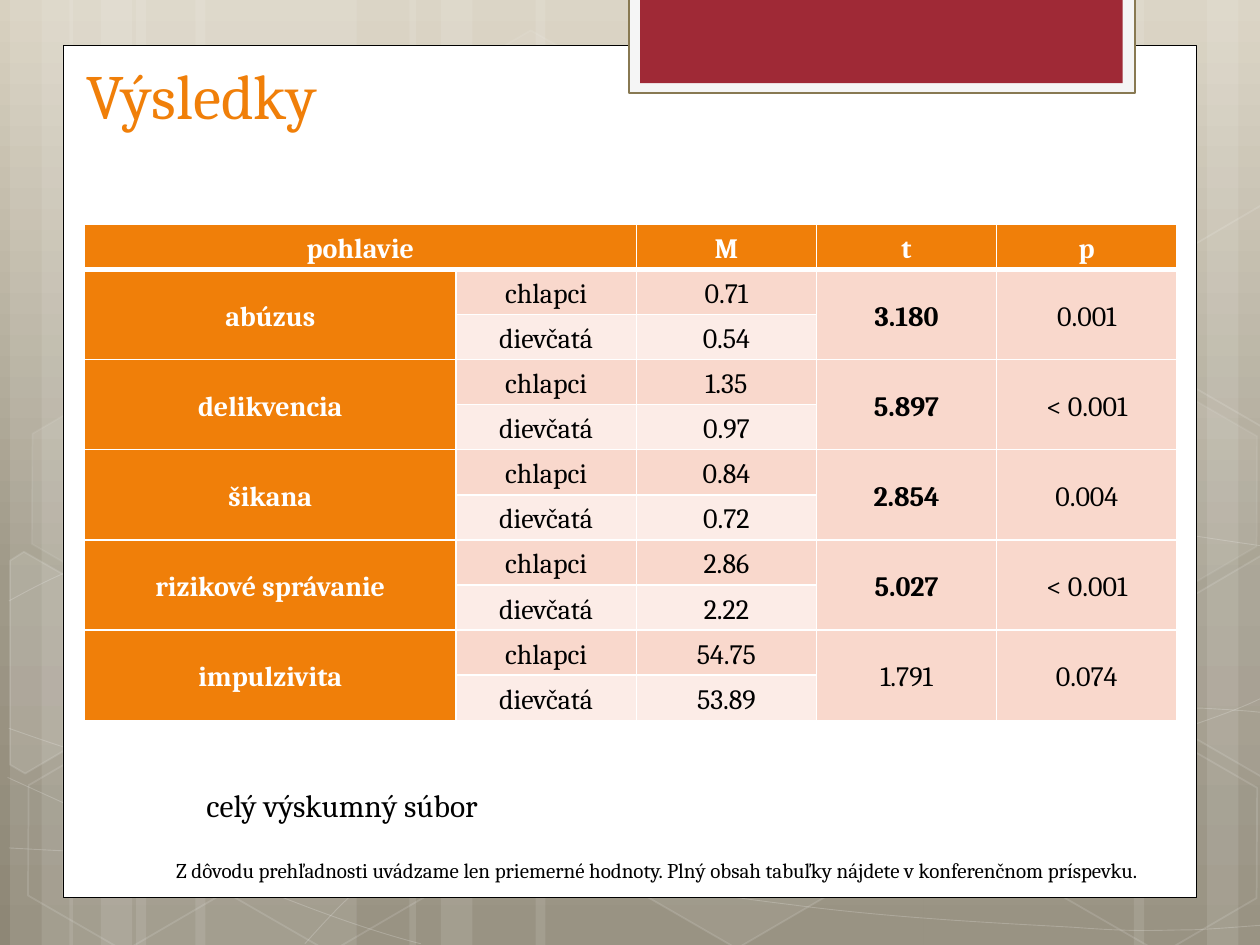
from copy import deepcopy

from lxml import etree
from pptx import Presentation
from pptx.dml.color import RGBColor
from pptx.enum.shapes import MSO_SHAPE
from pptx.enum.text import MSO_ANCHOR, MSO_AUTO_SIZE, PP_ALIGN
from pptx.oxml.ns import qn
from pptx.util import Inches, Pt

WHITE = RGBColor(0xFF, 0xFF, 0xFF)
BLACK = RGBColor(0, 0, 0)
ORANGE = RGBColor(0xF0, 0x7F, 0x09)
PINK = RGBColor(0xF9, 0xD8, 0xCC)
PALE_PINK = RGBColor(0xFC, 0xEC, 0xE7)
CRIMSON = RGBColor(0x9F, 0x29, 0x36)
TAB_GRAY = RGBColor(0xF5, 0xF5, 0xF5)
TAB_EDGE = RGBColor(0x88, 0x79, 0x52)
SKY = [(0, RGBColor(0xD8, 0xD1, 0xC0)), (0.62, RGBColor(0x9F, 0x99, 0x88)),
       (1, RGBColor(0x8E, 0x87, 0x76))]
FONT = "Cambria"

# left, width
STRIPES = [(1.08, 1.75), (0.08, 0.5), (0.33, 0.83), (1.55, 1.75), (0.55, 0.5), (0.8, 0.83),
           (7.33, 1.75), (9.58, 0.5), (9, 0.83), (4.25, 3.08), (3.25, 0.5), (3.5, 0.83)]
# start point, then two control points and an end point for each segment
CURVES = [
    [(0.07, 6.73), (0.61, 6.76), (1.15, 6.79), (1.9, 6.78), (2.65, 6.77), (3.58, 6.75),
     (4.58, 6.65), (5.58, 6.55), (7, 6.36), (7.92, 6.17), (8.83, 5.98), (9.77, 5.68),
     (10.07, 5.51)],
    [(0.07, 4.77), (0.36, 4.61), (0.65, 4.46), (1.21, 4.31), (1.78, 4.16), (2.59, 3.94),
     (3.47, 3.87), (4.36, 3.8), (5.44, 3.79), (6.54, 3.87), (7.64, 3.95), (9.47, 4.26),
     (10.07, 4.34)],
    [(0.06, 6.17), (1.27, 6.72), (2.47, 7.27), (3.34, 7.49)],
    [(0.07, 5.78), (0.38, 5.89), (0.7, 6), (1.28, 6.16), (1.86, 6.31), (2.73, 6.56),
     (3.57, 6.73), (4.4, 6.9), (5.45, 7.08), (6.28, 7.18), (7.11, 7.29), (8, 7.33),
     (8.53, 7.36), (9.05, 7.4), (9.19, 7.38), (9.45, 7.38), (9.71, 7.37), (9.89, 7.35),
     (10.07, 7.34)],
    [(2.42, 7.49), (2.6, 7.29), (2.78, 7.09), (3.02, 6.91), (3.26, 6.73), (3.6, 6.53),
     (3.88, 6.39), (4.16, 6.25), (4.33, 6.19), (4.7, 6.09), (5.06, 5.99), (5.73, 5.85),
     (6.08, 5.78), (6.44, 5.71), (6.49, 5.71), (6.8, 5.69), (7.11, 5.66), (7.6, 5.63),
     (7.94, 5.62), (8.29, 5.61), (8.86, 5.62), (8.86, 5.62), (8.86, 5.62), (9.53, 5.62),
     (9.53, 5.62), (9.71, 5.63), (9.88, 5.64), (9.97, 5.65), (10.06, 5.66), (10.03, 5.65),
     (10.06, 5.66)],
]
# left, top, fill opacity, line opacity
HEXAGONS = [(3.34, 0.36, 4, 8), (4.97, 5.89, 6, 12), (0.11, 5.91, 0, 12), (0.14, 3.12, 7, 8),
            (1.74, 5.92, 0, 12), (7.53, 4.53, 10, 12), (8.34, 5.93, 0, 12), (8.34, 3.14, 7, 8)]
# corners, fill opacity
CUT_HEXAGONS = [
    ([(0.08, 4.45), (0.19, 4.38), (0.96, 4.82), (0.95, 5.7), (0.2, 6.14), (0.08, 6.07)], 10),
    ([(9.26, 4.85), (10.01, 4.41), (10.09, 4.46), (10.09, 6.13), (10.02, 6.17),
      (9.26, 5.73)], 4),
    ([(9.26, 2.07), (10.01, 1.63), (10.1, 1.68), (10.09, 3.35), (10.02, 3.39),
      (9.26, 2.95)], 0),
]

HEADERS = ["pohlavie", None, "M", "t", "p"]
# variable, mean of boys, mean of girls, t, p, significant
RESULTS = [
    ("abúzus", "0.71", "0.54", "3.180", "0.001", True),
    ("delikvencia", "1.35", "0.97", "5.897", "< 0.001", True),
    ("šikana", "0.84", "0.72", "2.854", "0.004", True),
    ("rizikové správanie", "2.86", "2.22", "5.027", "< 0.001", True),
    ("impulzivita", "54.75", "53.89", "1.791", "0.074", False),
]


def paint(shape, fill=None, line=None, width=1, fill_alpha=100, line_alpha=100):
    """Set fill and line with opacity in percent; None leaves the part empty."""
    shape.shadow.inherit = False
    for part, color, alpha in ((shape.fill, fill, fill_alpha),
                               (shape.line.fill, line, line_alpha)):
        if color is None or alpha == 0:
            part.background()
        else:
            part.solid()
            part.fore_color.rgb = color
    if line is not None:
        shape.line.width = Pt(width)
    properties = shape.element.spPr
    for tag, alpha in (("a:solidFill", fill_alpha), ("a:ln/a:solidFill", line_alpha)):
        steps = "/".join(qn(step) for step in tag.split("/"))
        color = properties.find(steps + "/" + qn("a:srgbClr"))
        if color is not None and alpha < 100:
            etree.SubElement(color, qn("a:alpha")).set("val", str(alpha * 1000))


def add_block(slide, box, kind=MSO_SHAPE.RECTANGLE, **look):
    block = slide.shapes.add_shape(kind, *(Inches(length) for length in box))
    paint(block, **look)
    return block


def add_outline(slide, points, close, **look):
    corners = [(Inches(x), Inches(y)) for x, y in points]
    builder = slide.shapes.build_freeform(*corners[0])
    builder.add_line_segments(corners[1:], close=close)
    outline = builder.convert_to_shape()
    paint(outline, **look)
    return outline


def bend(outline):
    """Join each three line segments into one cubic Bezier segment."""
    segments = list(outline.element.iter(qn("a:lnTo")))
    for start in range(0, len(segments), 3):
        curve = etree.Element(qn("a:cubicBezTo"))
        segments[start].addprevious(curve)
        for segment in segments[start:start + 3]:
            curve.append(segment[0])
            segment.getparent().remove(segment)


def add_backdrop(slide):
    fill = slide.background.fill
    fill.gradient()
    fill.gradient_angle = 270
    stop_list = next(slide.element.iter(qn("a:gsLst")))
    stop_list.append(deepcopy(stop_list[0]))
    for stop, (position, color) in zip(fill.gradient_stops, SKY):
        stop.position = position
        stop.color.rgb = color

    for left, width in STRIPES:
        add_block(slide, (left, 0, width, 7.5), fill=WHITE, fill_alpha=10)
    for curve in CURVES:
        bend(add_outline(slide, curve, False, line=WHITE, width=0.5, line_alpha=20))
    for left, top, fill_alpha, line_alpha in HEXAGONS:
        hexagon = add_block(slide, (left, top, 1.75, 1.52), MSO_SHAPE.HEXAGON, fill=WHITE,
                            line=WHITE, fill_alpha=fill_alpha, line_alpha=line_alpha)
        hexagon.adjustments[0] = 0.285
        hexagon.rotation = 30
    for corners, fill_alpha in CUT_HEXAGONS:
        add_outline(slide, corners, True, fill=WHITE, line=WHITE,
                    fill_alpha=fill_alpha, line_alpha=12)


def add_card(slide):
    add_block(slide, (0.5, 0.36, 9, 6.76), fill=WHITE, line=BLACK, width=0.5)
    add_block(slide, (4.99, -0.02, 4.02, 0.76), fill=TAB_GRAY, line=TAB_EDGE, width=1.25)
    add_block(slide, (5.08, -0.02, 3.83, 0.68), fill=CRIMSON)


def write(frame, text, size, color=BLACK, bold=False, align=PP_ALIGN.LEFT):
    paragraph = frame.paragraphs[0]
    paragraph.alignment = align
    run = paragraph.add_run()
    run.text = text
    run.font.name = FONT
    run.font.size = Pt(size)
    run.font.bold = bold
    run.font.color.rgb = color
    return paragraph


def add_title(slide, box, text):
    title = slide.shapes.title
    title.left, title.top, title.width, title.height = (Inches(length) for length in box)
    frame = title.text_frame
    frame.auto_size = MSO_AUTO_SIZE.NONE
    frame.vertical_anchor = MSO_ANCHOR.BOTTOM
    write(frame, text, 36, ORANGE)
    slide.element.cSld.spTree.append(title.element)  # in front of the card


def fill_cell(cell, text, fill, color=BLACK, bold=False):
    cell.fill.solid()
    cell.fill.fore_color.rgb = fill
    cell.vertical_anchor = MSO_ANCHOR.MIDDLE
    cell.margin_left = cell.margin_right = Inches(0.05)
    cell.margin_top = cell.margin_bottom = 0
    if text:
        paragraph = write(cell.text_frame, text, 16, color, bold, PP_ALIGN.CENTER)
        paragraph.line_spacing = 1.15
        paragraph.space_after = Pt(10)


def rule_cell(cell, **widths):
    """Draw white borders; the keys are the sides L, R, T, B in this order."""
    properties = cell._tc.get_or_add_tcPr()
    for position, (side, width) in enumerate(widths.items()):
        border = etree.Element(qn("a:ln" + side), w=str(Pt(width)))
        color = etree.SubElement(etree.SubElement(border, qn("a:solidFill")), qn("a:srgbClr"))
        color.set("val", str(WHITE))
        properties.insert(position, border)


def add_results(slide, box):
    row_count = 1 + 2 * len(RESULTS)
    table = slide.shapes.add_table(row_count, len(HEADERS),
                                   *(Inches(length) for length in box)).table
    for column, width in zip(table.columns, (2.95, 1.43, 1.43, 1.43, 1.43)):
        column.width = Inches(width)
    for column, header in enumerate(HEADERS):
        fill_cell(table.cell(0, column), header, ORANGE, WHITE, True)
        rule_cell(table.cell(0, column), L=1, R=1, T=1, B=3)
    table.cell(0, 0).merge(table.cell(0, 1))

    for index, (variable, boys, girls, t, p, significant) in enumerate(RESULTS):
        top = 1 + 2 * index
        for row, sex, mean, fill in ((top, "chlapci", boys, PINK),
                                     (top + 1, "dievčatá", girls, PALE_PINK)):
            fill_cell(table.cell(row, 1), sex, fill)
            fill_cell(table.cell(row, 2), mean, fill)
        for column, text, look in ((0, variable, (ORANGE, WHITE, True)),
                                   (3, t, (PINK, BLACK, significant)),
                                   (4, p, (PINK, BLACK, False))):
            fill_cell(table.cell(top, column), text, *look)
            fill_cell(table.cell(top + 1, column), None, look[0])
            table.cell(top, column).merge(table.cell(top + 1, column))


def add_note(slide, box, text, size):
    frame = slide.shapes.add_textbox(*(Inches(length) for length in box)).text_frame
    frame.word_wrap = True
    frame.auto_size = MSO_AUTO_SIZE.SHAPE_TO_FIT_TEXT
    write(frame, text, size)


def main():
    deck = Presentation()
    deck.slide_width, deck.slide_height = Inches(10), Inches(7.5)
    slide = deck.slides.add_slide(deck.slide_layouts[5])
    add_backdrop(slide)
    add_card(slide)
    add_title(slide, (0.59, 0.44, 3.86, 0.66), "Výsledky")
    add_results(slide, (0.67, 1.78, 8.66, 3.94))
    add_note(slide, (1.54, 6.19, 3.7, 0.4), "celý výskumný súbor", 18)
    add_note(slide, (1.3, 6.76, 8.27, 0.3), "Z dôvodu prehľadnosti uvádzame len priemerné "
             "hodnoty. Plný obsah tabuľky nájdete v konferenčnom príspevku.", 12)
    deck.save("out.pptx")


if __name__ == "__main__":
    main()
